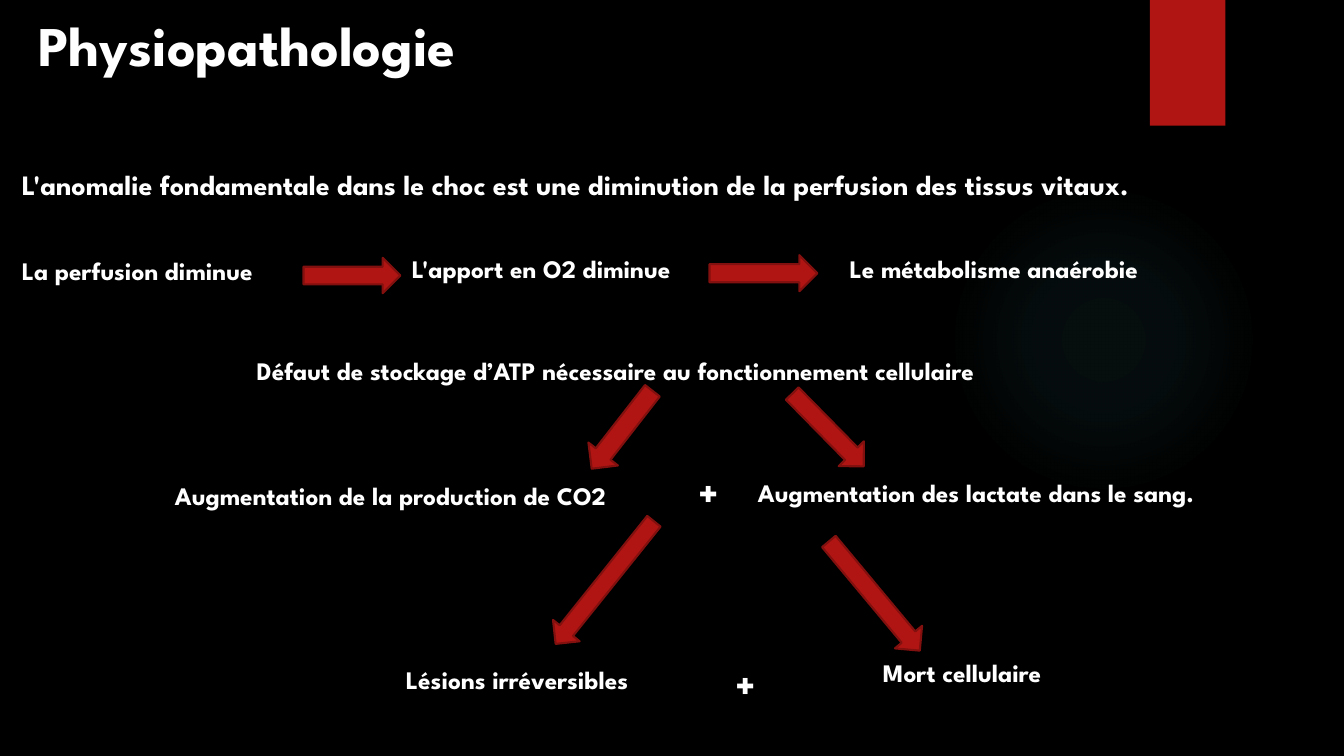
from lxml.etree import SubElement
from pptx import Presentation
from pptx.dml.color import RGBColor
from pptx.enum.shapes import MSO_SHAPE
from pptx.enum.text import MSO_AUTO_SIZE
from pptx.oxml.ns import qn
from pptx.util import Cm, Pt

COLORS = {"back": "000000", "text": "FFFFFF", "red": "B01513",
          "edge": "82100E", "glow": "50B9C1"}
FONT = {"name": "League Spartan", "bold": True}
RIGHT, DOWN = MSO_SHAPE.RIGHT_ARROW, MSO_SHAPE.DOWN_ARROW


def paint(fill, name):
    fill.solid()
    fill.fore_color.rgb = RGBColor.from_string(COLORS[name])


def label(slide, box, words, size=18, wrap=True):
    shape = slide.shapes.add_textbox(*map(Cm, box))
    frame = shape.text_frame
    for key, value in {"word_wrap": wrap, "text": words,
                       "auto_size": MSO_AUTO_SIZE.SHAPE_TO_FIT_TEXT}.items():
        setattr(frame, key, value)
    font = frame.paragraphs[0].runs[0].font
    for key, value in {**FONT, "size": Pt(size)}.items():
        setattr(font, key, value)
    font.color.rgb = RGBColor.from_string(COLORS["text"])


def block(slide, kind, box, color="red"):
    """Add a flat shape without an outline."""
    shape = slide.shapes.add_shape(kind, *map(Cm, box))
    shape.shadow.inherit = False
    paint(shape.fill, color)
    shape.line.fill.background()
    return shape


def arrow(slide, box, turn=0, kind=RIGHT):
    shape = block(slide, kind, box)
    paint(shape.line.fill, "edge")
    shape.line.width = Pt(1.5)
    shape.rotation = turn


def glow(slide, box):
    """Add a disc that fades out from its centre."""
    disc = block(slide, MSO_SHAPE.OVAL, box, "glow")
    disc.fill.gradient()
    grad = disc.fill._xPr.find(qn("a:gradFill"))
    for child in list(grad):
        grad.remove(child)
    stops = SubElement(grad, qn("a:gsLst"))
    for place, alpha in ((0, 7), (36, 6), (69, 0)):
        stop = SubElement(stops, qn("a:gs"), pos=str(place * 1000))
        tint = SubElement(stop, qn("a:srgbClr"), val=COLORS["glow"])
        SubElement(tint, qn("a:alpha"), val=str(alpha * 1000))
    fade = SubElement(grad, qn("a:path"))
    fade.set("path", "circle")
    SubElement(fade, qn("a:fillToRect"), {side: "50000" for side in "ltrb"})


def decor(slide, box):
    left, top, wide, high = box
    paint(slide.background.fill, "back")
    glow(slide, (left + 23.9, top + 4.65, 7.82, 7.82))
    block(slide, MSO_SHAPE.RECTANGLE, (left + wide - 4.89, top, 1.9, 3.17))


def heading(slide, box):
    left, top, wide, high = box
    label(slide, (left + 0.41, top, 12.4, 2.41), "Physiopathologie", 40, False)
    label(slide, (left, top + high - 1.12, wide, 1.12),
          "L'anomalie fondamentale dans le choc est une diminution "
          "de la perfusion des tissus vitaux.", 20)


def stage(slide, box, texts, arrows):
    """Place texts and arrows by their offsets from the box corner."""
    left, top = box
    for (x, y, wide, high), *rest in texts:
        label(slide, (left + x, top + y, wide, high), *rest)
    for (x, y, wide, high), *rest in arrows:
        arrow(slide, (left + x, top + y, wide, high), *rest)


def chain(slide, box):
    stage(slide, box, [
        ((0, 0.07, 6.93, 1.02), "La perfusion diminue"),
        ((9.83, 0, 7.92, 1.02), "L'apport en O2 diminue\u00a0", 18, False),
        ((20.86, 0, 10.01, 1.02), "Le métabolisme anaérobie"),
    ], [
        ((7.35, 0.25, 2.44, 0.89),),
        ((17.58, 0.18, 2.72, 0.91),),
    ])


def effects(slide, box):
    stage(slide, box, [
        ((2.22, 0, 21.87, 1.02),
         "Défaut de stockage d’ATP nécessaire au fonctionnement cellulaire"),
        ((0.16, 3.15, 13.46, 1.02), "Augmentation de la production de CO2"),
        ((13.35, 2.84, 1.12, 1.45), "+", 28, False),
        ((14.85, 3.07, 13.16, 1.02), "Augmentation des lactate dans le sang."),
    ], [
        ((15.58, 1.55, 2.57, 0.89), 45.5),
        ((10.43, 1.52, 2.49, 0.94), 127.9),
    ])


def outcome(slide, box):
    stage(slide, box, [
        ((0, 3.38, 6.55, 1.02), "Lésions irréversibles", 18, False),
        ((8.3, 3.28, 1.14, 1.45), "+", 28),
        ((12.02, 3.2, 5.11, 1.02), "Mort cellulaire", 18, False),
    ], [
        ((3.28, 1.02, 3.96, 0.86), 128.7),
        ((11.61, 0, 0.89, 3.58), 320.2, DOWN),
    ])


def main():
    deck = Presentation()
    deck.slide_width, deck.slide_height = Cm(33.87), Cm(19.05)
    slide = deck.slides.add_slide(deck.slide_layouts[6])
    decor(slide, (0, 0, 33.87, 19.05))
    heading(slide, (0.3, 0.15, 32.18, 5.06))
    chain(slide, (0.3, 6.25))
    effects(slide, (4, 8.84))
    outcome(slide, (9.98, 13.23))
    deck.save("out.pptx")


if __name__ == "__main__":
    main()
